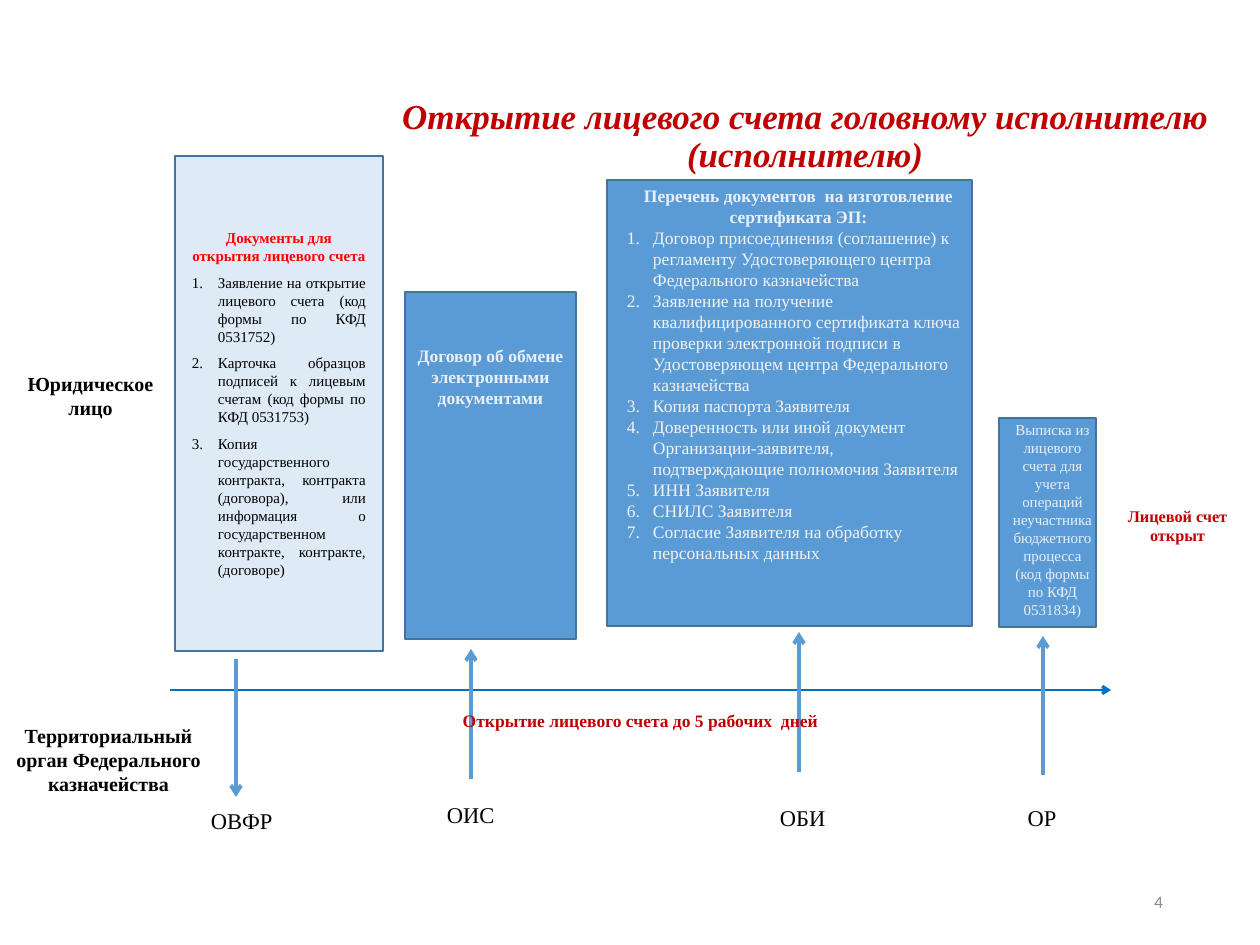
import pptx
import pptx.util
import pptx.dml.color
import pptx.enum.shapes
import pptx.enum.text
from lxml import etree
from pptx.oxml.ns import qn

PX = 10160  # EMU in one px, 90 px to the inch
SERIF = "Times New Roman"
COLORS = {"pale": "DEEBF7", "blue": "5B9BD5", "edge": "43739E", "axis": "0070C0", "title": "C00000",
          "red": "FF0000", "black": "000000", "light": "EAEFF7", "item": "F2F2F2", "gray": "8C8C8C"}
ALIGN = pptx.enum.text.PP_ALIGN
ANCHOR = pptx.enum.text.MSO_ANCHOR
BOLD16 = {"size": 16, "color": "black", "bold": True}
UNIT = {"size": 18, "color": "black"}
HEAD = {"size": 14, "color": "light", "bold": True}

# Content
TITLE = "Открытие лицевого счета головному исполнителю (исполнителю)"
ACCOUNT_HEAD = "Документы для открытия лицевого счета"
ACCOUNT_DOCS = [
    "Заявление на открытие лицевого счета (код формы по КФД 0531752)",
    "Карточка образцов подписей к лицевым счетам (код формы по КФД 0531753)",
    "Копия государственного контракта, контракта (договора), или информация о "
    "государственном контракте, контракте, (договоре)",
]
CERT_HEAD = "Перечень документов  на изготовление сертификата ЭП:"
CERT_DOCS = [
    "Договор присоединения (соглашение) к регламенту Удостоверяющего центра Федерального казначейства",
    "Заявление на получение квалифицированного сертификата ключа проверки электронной подписи "
    "в Удостоверяющем центра Федерального казначейства",
    "Копия паспорта Заявителя",
    "Доверенность или иной документ Организации-заявителя, подтверждающие полномочия Заявителя",
    "ИНН Заявителя",
    "СНИЛС Заявителя",
    "Согласие Заявителя на обработку персональных данных",
]
# Place in px, lines, alignment, font
LABELS = [
    ((890, 876, 284, 50), ["4"], ALIGN.RIGHT, {"size": 14, "color": "gray", "name": "Calibri"}),
    ((11, 367, 159, 59), ["Юридическое", "лицо"], ALIGN.CENTER, BOLD16),
    ((3, 719, 211, 84), ["Территориальный орган Федерального казначейства"], ALIGN.CENTER, BOLD16),
    ((1108, 501, 139, 50), ["Лицевой счет", "открыт"], ALIGN.CENTER,
     {"size": 13, "color": "title", "bold": True}),
    ((200, 802, 108, 38), ["ОВФР"], ALIGN.LEFT, UNIT),
    ((436, 796, 108, 38), ["ОИС"], ALIGN.LEFT, UNIT),
    ((769, 799, 108, 38), ["ОБИ"], ALIGN.LEFT, UNIT),
    ((988, 799, 108, 38), ["ОР"], ALIGN.CENTER, UNIT),
]
# Start, end, colour, width
ARROWS = [
    ((170, 690), (1111, 690), "axis", 2.25),
    ((236, 659), (236, 797), "blue", 3),
    ((471, 779), (471, 649), "blue", 3),
    ((799, 772), (799, 632), "blue", 3),
    ((1043, 775), (1043, 636), "blue", 3),
]
BLOCKS = [(405, 292, 171, 347), (607, 180, 365, 446), (999, 418, 97, 209)]
BLOCK_LABELS = [
    ((418, 705, 445, 32), ["Открытие лицевого счета до 5 рабочих  дней"], ALIGN.CENTER,
     {"size": 14, "color": "title", "bold": True}),
    ((395, 340, 191, 75), ["Договор об обмене электронными документами"], ALIGN.CENTER, HEAD),
    ((1000, 416, 105, 211), ["Выписка из лицевого счета для учета операций неучастника бюджетного "
                             "процесса (код формы по КФД 0531834)"], ALIGN.CENTER,
     {"size": 12, "color": "light"}),
]


def px(*values):
    return [pptx.util.Emu(v * PX) for v in values]


def rgb(name):
    return pptx.dml.color.RGBColor.from_string(COLORS[name])


def frame(sp, anchor=ANCHOR.TOP, side=11):
    tf = sp.text_frame
    margins = px(side, 5, side, 5)
    values = {"word_wrap": True, "auto_size": pptx.enum.text.MSO_AUTO_SIZE.NONE, "vertical_anchor": anchor,
              "margin_left": margins[0], "margin_top": margins[1],
              "margin_right": margins[2], "margin_bottom": margins[3]}
    for key, value in values.items():
        setattr(tf, key, value)
    return tf


def write(tf, text, align, fmt, first=False, numbered=False, before=0):
    p = tf.paragraphs[0] if first else tf.add_paragraph()
    p.alignment = align
    if before and not first:
        p.space_before = pptx.util.Pt(before)
    if numbered:
        pPr = p._p.get_or_add_pPr()
        pPr.set("marL", str(26 * PX))
        pPr.set("indent", str(-26 * PX))
        etree.SubElement(pPr, qn("a:buFont"), typeface="+mj-lt")
        etree.SubElement(pPr, qn("a:buAutoNum"), type="arabicPeriod")
    r = p.add_run()
    r.text = text
    values = {"name": SERIF, "bold": False, "italic": False, **fmt}
    r.font.color.rgb = rgb(values.pop("color"))
    values["size"] = pptx.util.Pt(values["size"])
    for key, value in values.items():
        setattr(r.font, key, value)
    return p


def add_label(s, place, lines, align, fmt):
    sp = s.shapes.add_textbox(*px(*place))
    tf = frame(sp, ANCHOR.MIDDLE if fmt.get("name") else ANCHOR.TOP)
    for i, line in enumerate(lines):
        write(tf, line, align, fmt, first=i == 0)


def add_list(tf, head, head_fmt, items, item_fmt, align, before=0):
    write(tf, head, ALIGN.CENTER, head_fmt, first=True)
    for item in items:
        write(tf, item, align, item_fmt, numbered=True, before=before)


def add_block(s, place, fill):
    sp = s.shapes.add_shape(pptx.enum.shapes.MSO_SHAPE.RECTANGLE, *px(*place))
    sp.shadow.inherit = False
    sp.fill.solid()
    sp.fill.fore_color.rgb = rgb(fill)
    sp.line.color.rgb = rgb("edge")
    sp.line.width = pptx.util.Pt(1)
    return sp


def add_arrow(s, start, end, color, width):
    c = s.shapes.add_connector(pptx.enum.shapes.MSO_CONNECTOR.STRAIGHT, *px(*start, *end))
    c.line.color.rgb = rgb(color)
    c.line.width = pptx.util.Pt(width)
    etree.SubElement(c.line._get_or_add_ln(), qn("a:tailEnd"), type="arrow")
    etree.SubElement(c._element.spPr, qn("a:effectLst"))


def main():
    prs = pptx.Presentation()
    prs.slide_width, prs.slide_height = px(1260, 945)
    s = prs.slides.add_slide(prs.slide_layouts[5])

    # Title
    sp = s.shapes.title
    sp.left, sp.top, sp.width, sp.height = px(363, 41, 884, 139)
    p = write(frame(sp, ANCHOR.BOTTOM), TITLE, ALIGN.CENTER,
              {"size": 28, "color": "title", "bold": True, "italic": True}, first=True)
    p.line_spacing = 0.9

    # Documents for the account
    sp = add_block(s, (175, 156, 208, 495), "pale")
    add_list(frame(sp, ANCHOR.MIDDLE, 17), ACCOUNT_HEAD, {"size": 12, "color": "red", "bold": True},
             ACCOUNT_DOCS, {"size": 12, "color": "black"}, ALIGN.JUSTIFY, before=7.1)

    # Participants, units and arrows
    for label in LABELS:
        add_label(s, *label)
    for arrow in ARROWS:
        add_arrow(s, *arrow)

    # Blue blocks and their texts
    for place in BLOCKS:
        add_block(s, place, "blue")
    for label in BLOCK_LABELS:
        add_label(s, *label)
    sp = s.shapes.add_textbox(*px(616, 180, 365, 414))
    add_list(frame(sp), CERT_HEAD, HEAD, CERT_DOCS, {"size": 14, "color": "item"}, ALIGN.LEFT)

    prs.save("out.pptx")


if __name__ == "__main__":
    main()
